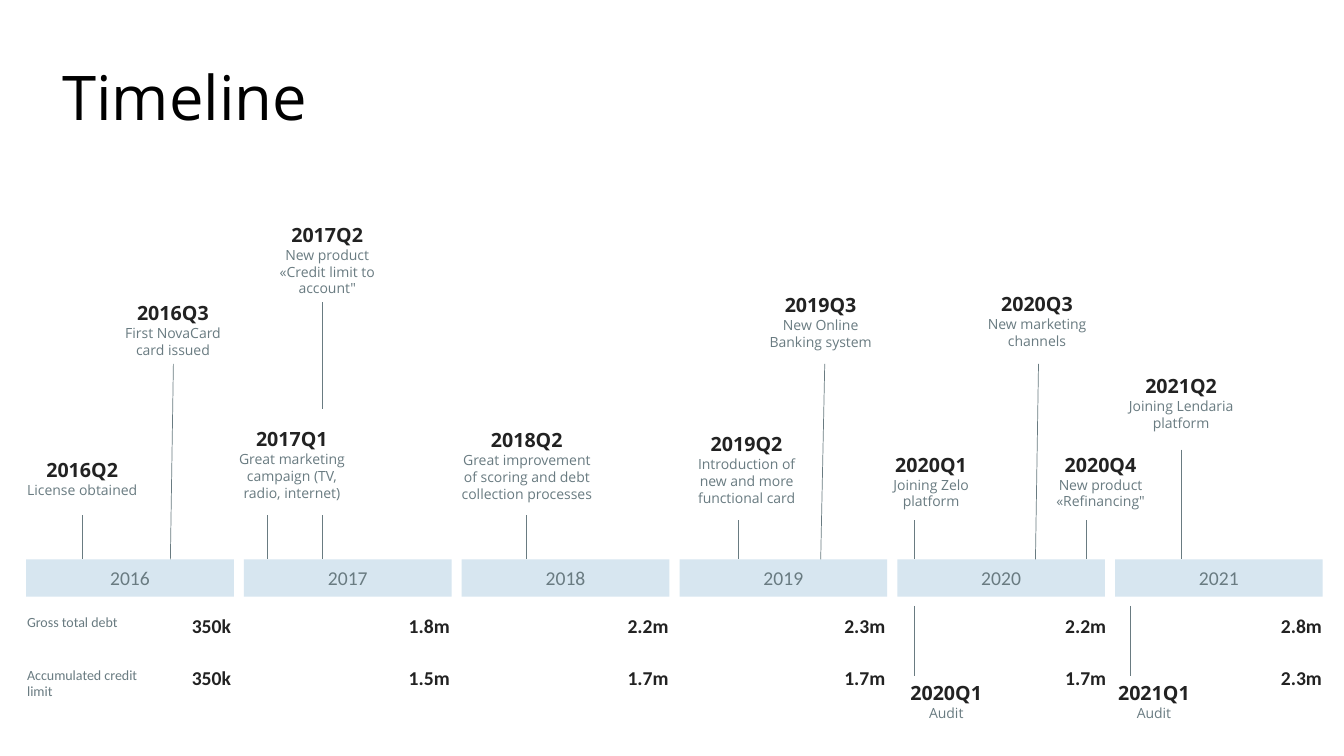
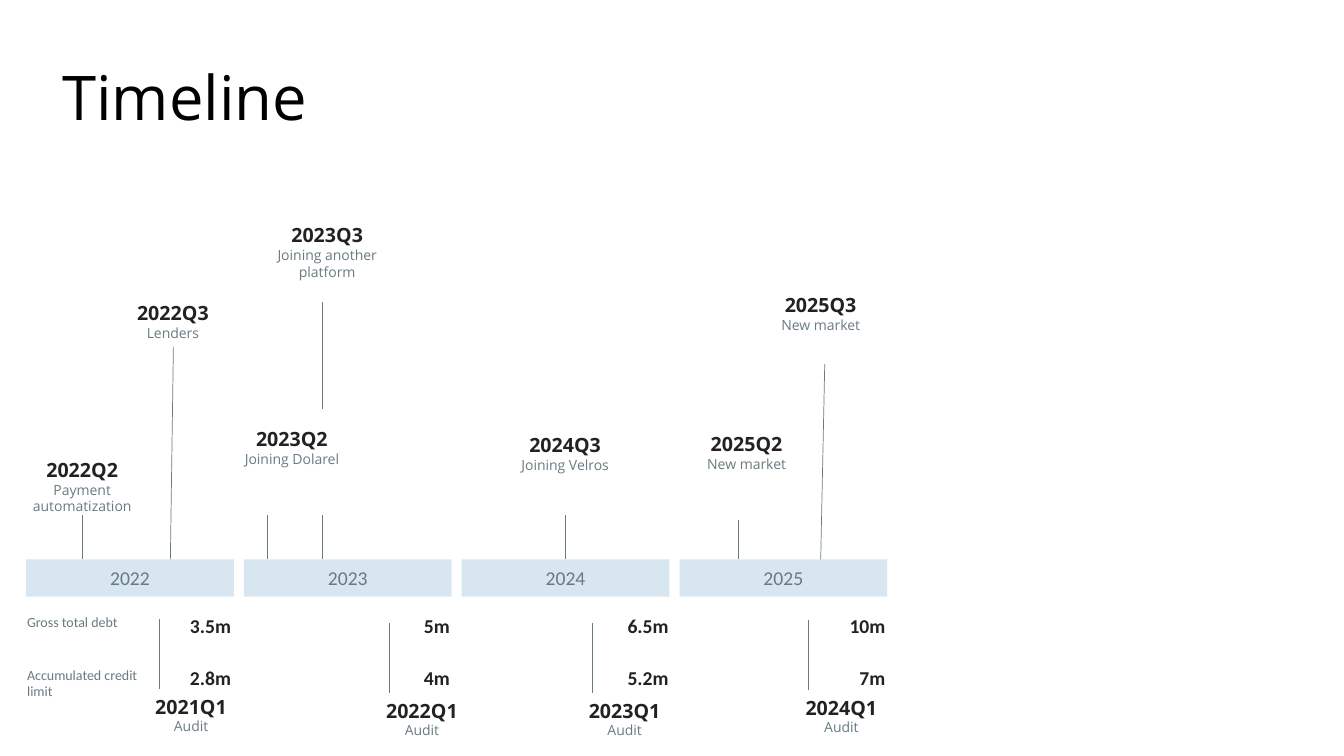
import dataclasses

import pptx
import pptx.dml.color
import pptx.enum.shapes
import pptx.enum.text
import pptx.oxml
import pptx.util

Inches = pptx.util.Inches
ALIGN = pptx.enum.text.PP_ALIGN


@dataclasses.dataclass(frozen=True)
class Theme:
    black: str = "000000"
    dark: str = "222222"
    grey: str = "697B81"
    band: str = "D7E6F0"
    heading_font: str = "Open Sans"
    figure_font: str = "Calibri"
    title_size: int = 44
    label_size: int = 14
    note_size: int = 10
    stem_width: float = 0.5


THEME = Theme()

BAND_LEFT, BAND_TOP, BAND_WIDTH, BAND_HEIGHT = 0.26, 5.55, 2.06, 0.37
BAND_PITCH = 2.16
FIGURE_LEFTS = (1.04, 3.21, 5.38, 7.53, 9.72, 11.86)
FIGURE_ROWS = (("Gross total debt", 6.04), ("Accumulated credit limit", 6.56))
BOX_WIDTH = 1.35
AUDIT_STEM = 0.7

SHARED_STEMS = (
    (0.82, 5.11, 0.82, BAND_TOP),
    (2.65, 5.11, 2.65, BAND_TOP),
    (3.2, 5.11, 3.2, BAND_TOP),
    (3.2, 3, 3.2, 4.06),
    (7.32, 5.16, 7.32, BAND_TOP),
    (8.18, 3.61, 8.14, BAND_TOP),
)

PAST = {
    "years": range(2016, 2022),
    "figures": (
        ("350k", "1.8m", "2.2m", "2.3m", "2.2m", "2.8m"),
        ("350k", "1.5m", "1.7m", "1.7m", "1.7m", "2.3m"),
    ),
    "milestones": (
        ("2016Q2", "License obtained", 0.14, 4.49, BOX_WIDTH),
        ("2016Q3", "First NovaCard card issued", 1.04, 2.94, BOX_WIDTH),
        ("2017Q1", "Great marketing campaign (TV, radio, internet)", 2.22, 4.19, BOX_WIDTH),
        ("2017Q2", "New product «Credit limit to account\"", 2.57, 2.16, BOX_WIDTH),
        ("2018Q2", "Great improvement of scoring and debt collection processes", 4.43, 4.2, 1.59),
        ("2019Q2", "Introduction of new and more functional card", 6.73, 4.24, BOX_WIDTH),
        ("2019Q3", "New Online Banking system", 7.41, 2.86, 1.46),
        ("2020Q1", "Joining Zelo platform", 8.56, 4.44, BOX_WIDTH),
        ("2020Q3", "New marketing channels", 9.61, 2.85, BOX_WIDTH),
        ("2020Q4", "New product «Refinancing\"", 10.24, 4.44, BOX_WIDTH),
        ("2021Q2", "Joining Lendaria platform", 10.91, 3.66, 1.61),
    ),
    "stems": (
        (1.72, 3.61, 1.69, BAND_TOP),
        (5.22, 5.11, 5.22, BAND_TOP),
        (9.07, 5.16, 9.07, BAND_TOP),
        (10.3, 3.61, 10.27, BAND_TOP),
        (10.77, 5.16, 10.77, BAND_TOP),
        (11.72, 4.46, 11.72, BAND_TOP),
    ),
    "audits": (("2020Q1", 8.71, 6.71, 9.07), ("2021Q1", 10.77, 6.71, 11.21)),
}

PLANNED = {
    "years": range(2022, 2026),
    "figures": (("3.5m", "5m", "6.5m", "10m"), ("2.8m", "4m", "5.2m", "7m")),
    "milestones": (
        ("2022Q2", "Payment automatization", 0.14, 4.49, BOX_WIDTH),
        ("2022Q3", "Lenders", 1.04, 2.94, BOX_WIDTH),
        ("2023Q2", "Joining Dolarel", 2.22, 4.19, BOX_WIDTH),
        ("2023Q3", "Joining another platform", 2.57, 2.16, BOX_WIDTH),
        ("2024Q3", "Joining Velros", 4.81, 4.25, 1.59),
        ("2025Q2", "New market", 6.73, 4.24, BOX_WIDTH),
        ("2025Q3", "New market", 7.41, 2.86, 1.46),
    ),
    "stems": (
        (1.72, 3.44, 1.69, BAND_TOP),
        (5.61, 5.11, 5.61, BAND_TOP),
    ),
    "audits": (
        ("2021Q1", 1.22, 6.84, 1.58),
        ("2022Q1", 3.51, 6.88, 3.86),
        ("2023Q1", 5.52, 6.88, 5.88),
        ("2024Q1", 7.67, 6.85, 8.02),
    ),
}


def rgb(value):
    return pptx.dml.color.RGBColor.from_string(value)


def style(paragraph, face, size, colour, bold=False, align=ALIGN.LEFT):
    paragraph.alignment = align
    for run in paragraph.runs:
        run.font.name = face
        run.font.size = pptx.util.Pt(size)
        run.font.color.rgb = rgb(colour)
        run.font.bold = bold


def add_text(slide, text, left, top, width, height):
    box = slide.shapes.add_textbox(Inches(left), Inches(top), Inches(width), Inches(height))
    frame = box.text_frame
    frame.word_wrap = True
    frame.auto_size = pptx.enum.text.MSO_AUTO_SIZE.SHAPE_TO_FIT_TEXT
    frame.text = text
    return frame.paragraphs


def add_title(slide, text):
    heading = add_text(slide, text, 0.52, 0.54, 7.11, 0.84)[0]
    style(heading, THEME.heading_font, THEME.title_size, THEME.black)


def add_year(slide, year, left):
    band = slide.shapes.add_shape(
        pptx.enum.shapes.MSO_SHAPE.RECTANGLE,
        Inches(left), Inches(BAND_TOP), Inches(BAND_WIDTH), Inches(BAND_HEIGHT),
    )
    band.shadow.inherit = False
    band.fill.solid()
    band.fill.fore_color.rgb = rgb(THEME.band)
    band.line.fill.background()
    frame = band.text_frame
    frame.vertical_anchor = pptx.enum.text.MSO_ANCHOR.MIDDLE
    frame.text = str(year)
    style(frame.paragraphs[0], THEME.figure_font, THEME.label_size, THEME.grey, align=ALIGN.CENTER)


def add_figures(slide, caption, top, figures):
    label = add_text(slide, caption, 0.17, top, BOX_WIDTH, 0.27)[0]
    style(label, THEME.figure_font, THEME.note_size, THEME.grey)
    for left, figure in zip(FIGURE_LEFTS, figures):
        amount = add_text(slide, figure, left, top, BOX_WIDTH, 0.34)[0]
        style(amount, THEME.figure_font, THEME.label_size, THEME.dark, True, ALIGN.RIGHT)


def add_milestone(slide, quarter, event, left, top, width):
    date, note = add_text(slide, f"{quarter}\n{event}", left, top, width, 0.5)
    style(date, THEME.heading_font, THEME.label_size, THEME.dark, True, ALIGN.CENTER)
    style(note, THEME.heading_font, THEME.note_size, THEME.grey, align=ALIGN.CENTER)


def add_stem(slide, *ends):
    stem = slide.shapes.add_connector(
        pptx.enum.shapes.MSO_CONNECTOR.STRAIGHT, *(Inches(end) for end in ends)
    )
    stem.line.color.rgb = rgb(THEME.grey)
    stem.line.width = pptx.util.Pt(THEME.stem_width)
    properties = stem.element.spPr
    properties.append(pptx.oxml.parse_xml(
        '<a:effectLst xmlns:a="http://schemas.openxmlformats.org/drawingml/2006/main"/>'
    ))


def add_timeline(deck, period):
    slide = deck.slides.add_slide(deck.slide_layouts[6])
    add_title(slide, "Timeline")
    for index, year in enumerate(period["years"]):
        add_year(slide, year, BAND_LEFT + index * BAND_PITCH)
    for (caption, top), figures in zip(FIGURE_ROWS, period["figures"]):
        add_figures(slide, caption, top, figures)
    for stem in SHARED_STEMS + period["stems"]:
        add_stem(slide, *stem)
    for milestone in period["milestones"]:
        add_milestone(slide, *milestone)
    for quarter, left, top, stem_x in period["audits"]:
        add_stem(slide, stem_x, top - AUDIT_STEM, stem_x, top)
        add_milestone(slide, quarter, "Audit", left, top, BOX_WIDTH)


def main():
    deck = pptx.Presentation()
    deck.slide_width = Inches(13.33)
    deck.slide_height = Inches(7.5)
    for period in (PAST, PLANNED):
        add_timeline(deck, period)
    deck.save("out.pptx")


if __name__ == "__main__":
    main()
